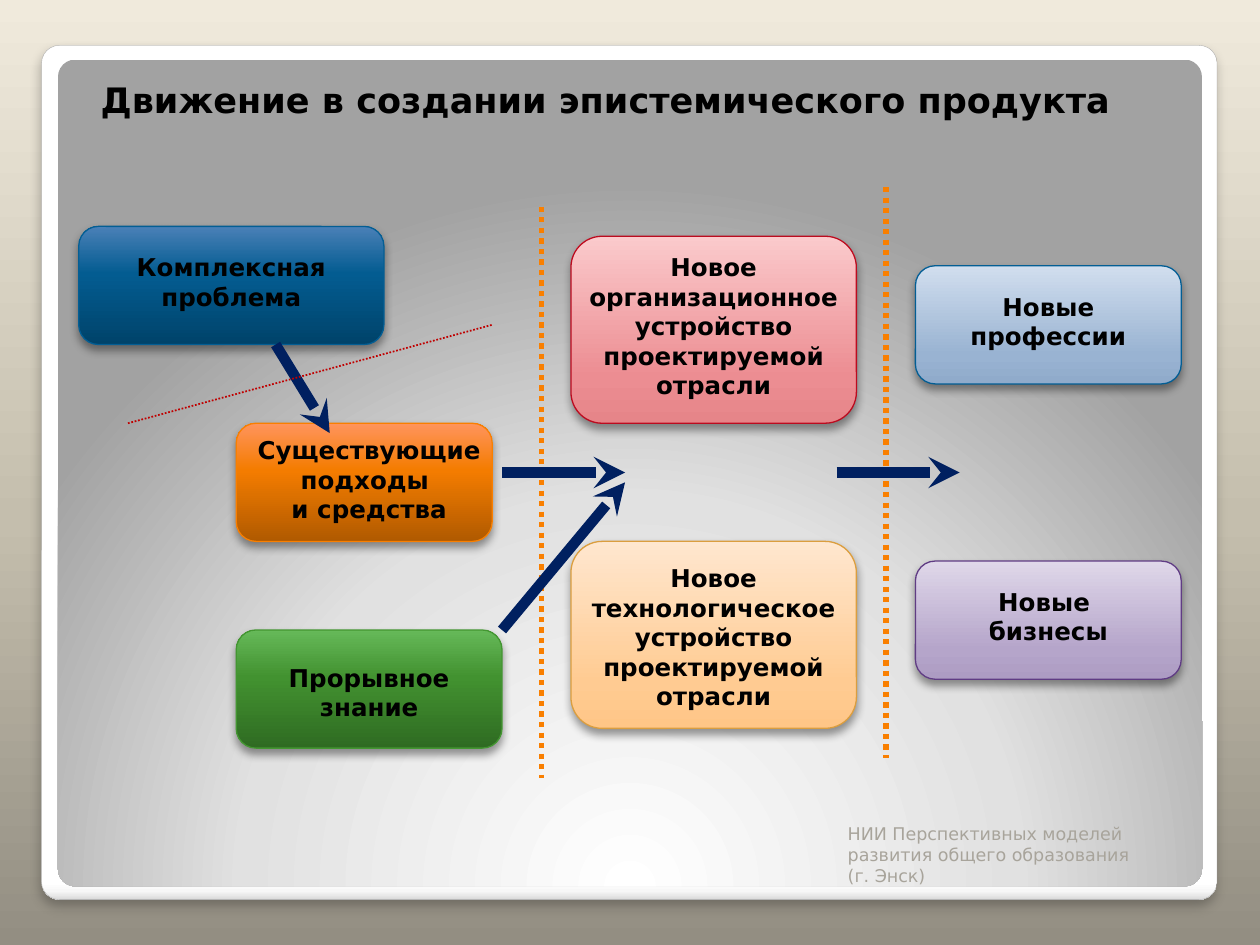
"""Build the slide on how an epistemic product is created."""
from lxml.etree import SubElement
from pptx import Presentation
from pptx.dml.color import RGBColor
from pptx.enum.dml import MSO_LINE
from pptx.enum.shapes import MSO_CONNECTOR, MSO_SHAPE
from pptx.enum.text import MSO_ANCHOR, MSO_AUTO_SIZE, PP_ALIGN
from pptx.oxml.ns import qn
from pptx.util import Inches, Pt

WIDTH, HEIGHT = 10, 7.5
UNIT = WIDTH / 128
FONT = "DejaVu Sans"
COLORS = {"text": "000000", "footer": "A8A49B", "frame": "A4A4A4", "divider": "F97F00",
          "arrow": "002060", "barrier": "C00000", "shadow": "000000"}
BACKDROP = [(0, "938E82"), (45, "C4BEAD"), (100, "F0EADC")]
FRAME = [(0, "FFFFFF"), (98, "FFFFFF"), (99, "F7F7F7"), (100, "DADADA")]
PANEL = [(0, "FFFFFF"), (55, "E1E1E1"), (100, "A2A2A2")]
PANEL_FOCUS = {"l": "50000", "t": "175000", "r": "50000", "b": "-75000"}
TITLE = "Движение в создании эпистемического продукта"
FOOTER = "НИИ Перспективных моделей развития общего образования (г. Энск)"

DARK, LIGHT = (0, 60, 100), (0, 25, 100)
CARDS = [
    {"box": (8, 23, 31, 12), "label": (6, 25, 35, 7.3), "stops": DARK,
     "fill": ("00436A", "035C91", "4A80B7"), "line": "035E94",
     "text": ["Комплексная проблема"]},
    {"box": (24, 43, 26, 12), "label": (20, 43.6, 35, 10.4), "stops": DARK,
     "fill": ("B05A00", "F47C00", "FF945C"), "line": "F97F00",
     "text": ["Существующие подходы ", "и средства"]},
    {"box": (24, 64, 27, 12), "label": (20, 66.7, 35, 7.3), "stops": DARK,
     "fill": ("2F6B22", "429230", "66B959"), "line": "439631",
     "text": ["Прорывное", "знание"]},
    {"box": (58, 24, 29, 19), "label": (55, 25, 35, 16.4), "stops": LIGHT,
     "fill": ("E68589", "EC8D92", "FBCACC"), "line": "BC0B1F",
     "text": ["Новое организационное устройство проектируемой отрасли"]},
    {"box": (58, 55, 29, 19), "label": (56, 56.6, 33, 16.4), "stops": LIGHT,
     "fill": ("FFC687", "FFCB92", "FFE7CF"), "line": "DB9E3F",
     "text": ["Новое технологическое устройство проектируемой отрасли"]},
    {"box": (93, 27, 27, 12), "label": (89, 29, 35, 7.3), "stops": LIGHT,
     "fill": ("90ABCB", "99B3D2", "D1DEEE"), "line": "035E94",
     "text": ["Новые", "профессии"]},
    {"box": (93, 57, 27, 12), "label": (89, 59, 35, 7.3), "stops": LIGHT,
     "fill": ("AD9CC3", "B5A5CA", "DFD7E9"), "line": "603C84",
     "text": ["Новые ", "бизнесы"]},
]
DIVIDERS = [(55, 21, 55, 79), (90, 19, 90, 77)]
ARROWS = [(28, 35, 33.5, 44), (51, 48, 63.5, 48), (51, 64, 63.5, 49), (85, 48, 97.5, 48)]
BARRIER = (13, 43, 50, 33)


def grid(cells):
    return [Inches(cell * UNIT) for cell in cells]


def shares(left, top, width, height):
    return [Inches(left * WIDTH), Inches(top * HEIGHT),
            Inches(width * WIDTH), Inches(height * HEIGHT)]


def set_gradient(fill, holder, stops, angle=270, focus=None):
    fill.solid()
    fill.fore_color.rgb = RGBColor.from_string(stops[0][1])
    solid = holder.find(qn("a:solidFill"))
    gradient = holder.makeelement(qn("a:gradFill"), {"rotWithShape": "1"})
    stop_list = SubElement(gradient, qn("a:gsLst"))
    for position, color in stops:
        stop = SubElement(stop_list, qn("a:gs"), pos=str(position * 1000))
        SubElement(stop, qn("a:srgbClr"), val=color)
    if focus:
        circle = SubElement(gradient, qn("a:path"), {"path": "circle"})
        SubElement(circle, qn("a:fillToRect"), focus)
    else:
        SubElement(gradient, qn("a:lin"), ang=str(angle * 60000), scaled="0")
    holder.replace(solid, gradient)


def add_rounded(page, place, stops, line=None, shadow=None, radius=None, angle=270, focus=None):
    box = page.shapes.add_shape(MSO_SHAPE.ROUNDED_RECTANGLE, *place)
    if radius:
        box.adjustments[0] = radius
    set_gradient(box.fill, box.element.spPr, stops, angle, focus)
    if line:
        box.line.color.rgb = RGBColor.from_string(line[0])
        box.line.width = Pt(line[1])
    else:
        box.line.fill.background()
    box.shadow.inherit = False
    if shadow:
        opacity, blur, distance = shadow
        effects = box.element.spPr.find(qn("a:effectLst"))
        outer = SubElement(effects, qn("a:outerShdw"), blurRad=str(Pt(blur)),
                           dist=str(Pt(distance)), dir="5400000", rotWithShape="0")
        color = SubElement(outer, qn("a:srgbClr"), val=COLORS["shadow"])
        SubElement(color, qn("a:alpha"), val=str(opacity * 1000))


def add_text(page, place, lines, size, color="text", bold=True, align=PP_ALIGN.CENTER,
             anchor=MSO_ANCHOR.TOP, grow=True):
    frame = page.shapes.add_textbox(*place).text_frame
    frame.word_wrap = True
    frame.vertical_anchor = anchor
    frame.auto_size = MSO_AUTO_SIZE.SHAPE_TO_FIT_TEXT if grow else MSO_AUTO_SIZE.NONE
    for index, line in enumerate(lines):
        para = frame.add_paragraph() if index else frame.paragraphs[0]
        para.alignment = align
        span = para.add_run()
        span.text = line
        span.font.name, span.font.size, span.font.bold = FONT, Pt(size), bold
        span.font.color.rgb = RGBColor.from_string(COLORS[color])


def add_line(page, ends, color, width, dotted=False):
    link = page.shapes.add_connector(MSO_CONNECTOR.STRAIGHT, *grid(ends))
    link.line.color.rgb = RGBColor.from_string(COLORS[color])
    link.line.width = Pt(width)
    if dotted:
        link.line.dash_style = MSO_LINE.ROUND_DOT
    else:
        SubElement(link.line._get_or_add_ln(), qn("a:tailEnd"), type="stealth")
    SubElement(link.element.spPr, qn("a:effectLst"))


def main():
    deck = Presentation()
    deck.slide_width, deck.slide_height = Inches(WIDTH), Inches(HEIGHT)
    page = deck.slides.add_slide(deck.slide_layouts[6])
    backdrop = page.background.fill
    backdrop.solid()
    set_gradient(backdrop, page.element.find(".//" + qn("p:bgPr")), BACKDROP)
    add_rounded(page, shares(0.033, 0.048, 0.933, 0.904), FRAME, (COLORS["frame"], 0.16),
                (25, 6, 4), 0.021, 90)
    add_rounded(page, shares(0.046, 0.063, 0.908, 0.875), PANEL, radius=0.021,
                focus=PANEL_FOCUS)
    add_text(page, shares(0.07, 0.077, 0.898, 0.059), [TITLE], 20, align=PP_ALIGN.LEFT)
    for card in CARDS:
        add_rounded(page, grid(card["box"]), list(zip(card["stops"], card["fill"])),
                    (card["line"], 0.75), (40, 5.2, 3))
        add_text(page, grid(card["label"]), card["text"], 14)
    for ends in DIVIDERS:
        add_line(page, ends, "divider", 3, dotted=True)
    for ends in ARROWS:
        add_line(page, ends, "arrow", 6)
    add_line(page, BARRIER, "barrier", 1, dotted=True)
    add_text(page, shares(0.663, 0.891, 0.25, 0.053), [FOOTER], 10, "footer", False,
             PP_ALIGN.LEFT, MSO_ANCHOR.BOTTOM, False)
    deck.save("out.pptx")


if __name__ == "__main__":
    main()
